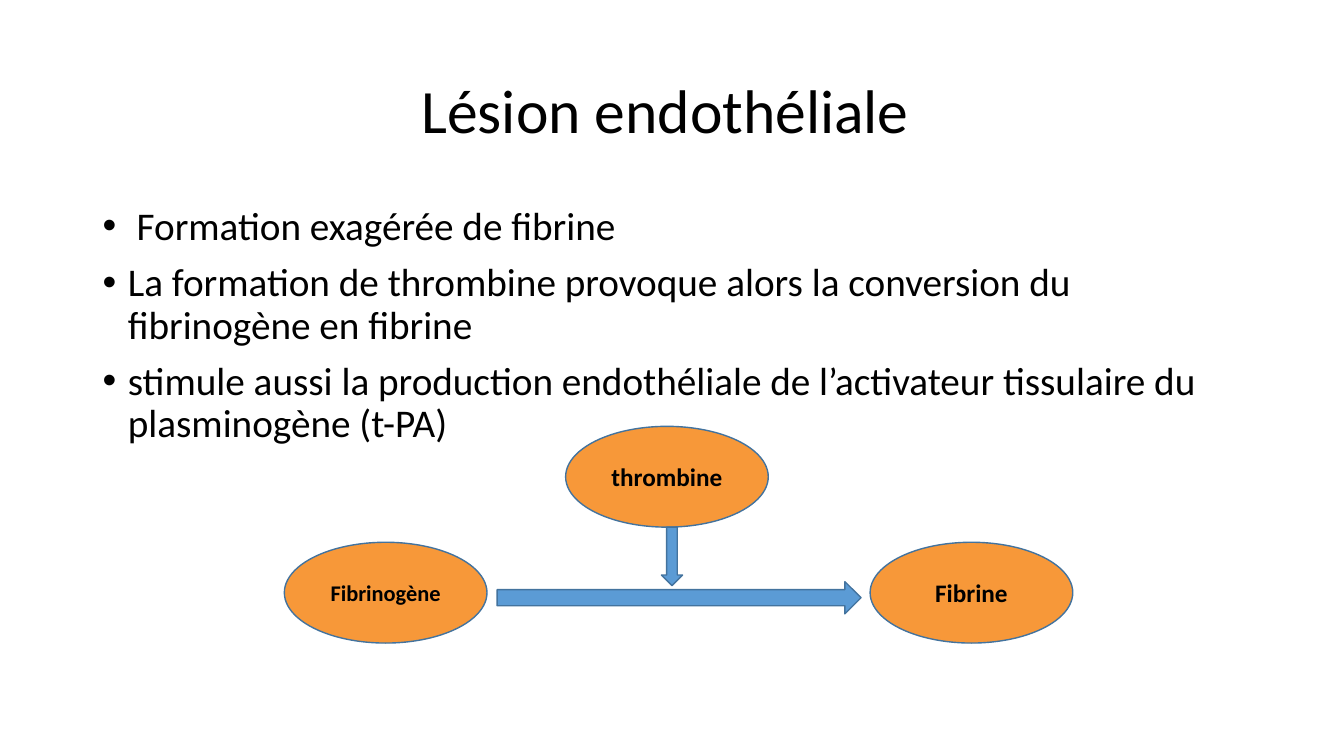
from lxml.etree import SubElement
from pptx import Presentation
from pptx.dml.color import RGBColor
from pptx.enum.shapes import MSO_SHAPE
from pptx.enum.text import MSO_ANCHOR, PP_ALIGN
from pptx.oxml.ns import qn
from pptx.util import Inches, Pt

COLOURS = {"text": "000000", "molecule": "F79839", "arrow": "5B9BD5", "outline": "43739E"}
FONT = "Calibri"
MOLECULE_SIZE = (2.01, 1)
TITLE = "Lésion endothéliale "
POINTS = [
    " Formation exagérée de fibrine",
    "La formation de thrombine provoque alors la conversion du fibrinogène en fibrine",
    "stimule aussi la production endothéliale de l’activateur tissulaire du plasminogène (t-PA)",
]
MOLECULES = [
    ("thrombine", 5.61, 4.23, 18),
    ("Fibrine", 8.63, 5.38, 18),
    ("Fibrinogène", 2.82, 5.38, 16),
]


def colour(name):
    return RGBColor.from_string(COLOURS[name])


def add_bullet(paragraph):
    properties = paragraph._p.get_or_add_pPr()
    properties.set("marL", str(Inches(0.25)))
    properties.set("indent", str(Inches(-0.25)))
    SubElement(properties, qn("a:buFont"), typeface="Arial")
    SubElement(properties, qn("a:buChar"), char="•")


def write(frame, lines, size, bold=False, align=PP_ALIGN.CENTER,
          anchor=MSO_ANCHOR.MIDDLE, spacing=1.0, before=0, bulleted=False):
    frame.word_wrap = True
    frame.vertical_anchor = anchor
    for index, line in enumerate(lines):
        paragraph = frame.add_paragraph() if index else frame.paragraphs[0]
        if bulleted:
            add_bullet(paragraph)
        paragraph.alignment = align
        paragraph.line_spacing = spacing
        if index:
            paragraph.space_before = Pt(before)
        run = paragraph.add_run()
        run.text = line
        run.font.name = FONT
        run.font.size = Pt(size)
        run.font.bold = bold
        run.font.color.rgb = colour("text")


def add_text(slide, box, lines, **text_format):
    textbox = slide.shapes.add_textbox(*map(Inches, box))
    write(textbox.text_frame, lines, **text_format)


def add_outlined(slide, preset, box, fill):
    shape = slide.shapes.add_shape(preset, *map(Inches, box))
    shape.shadow.inherit = False
    shape.fill.solid()
    shape.fill.fore_color.rgb = colour(fill)
    shape.line.color.rgb = colour("outline")
    shape.line.width = Pt(1)
    return shape


def add_molecule(slide, name, left, top, size):
    molecule = add_outlined(slide, MSO_SHAPE.OVAL, (left, top, *MOLECULE_SIZE), "molecule")
    write(molecule.text_frame, [name], size=size, bold=True)


def main():
    presentation = Presentation()
    presentation.slide_width = Inches(13.33)
    presentation.slide_height = Inches(7.5)
    slide = presentation.slides.add_slide(presentation.slide_layouts[6])

    add_text(slide, (0.92, 0.4, 11.5, 1.45), [TITLE], size=44, spacing=0.9)
    add_text(slide, (0.92, 2, 11.5, 4.76), POINTS, size=28, align=PP_ALIGN.LEFT,
             anchor=MSO_ANCHOR.TOP, spacing=0.9, before=10, bulleted=True)
    for molecule in MOLECULES:
        add_molecule(slide, *molecule)
    add_outlined(slide, MSO_SHAPE.RIGHT_ARROW, (4.93, 5.77, 3.61, 0.32), "arrow")
    add_outlined(slide, MSO_SHAPE.DOWN_ARROW, (6.56, 5.23, 0.21, 0.58), "arrow")

    presentation.save("out.pptx")


if __name__ == "__main__":
    main()
